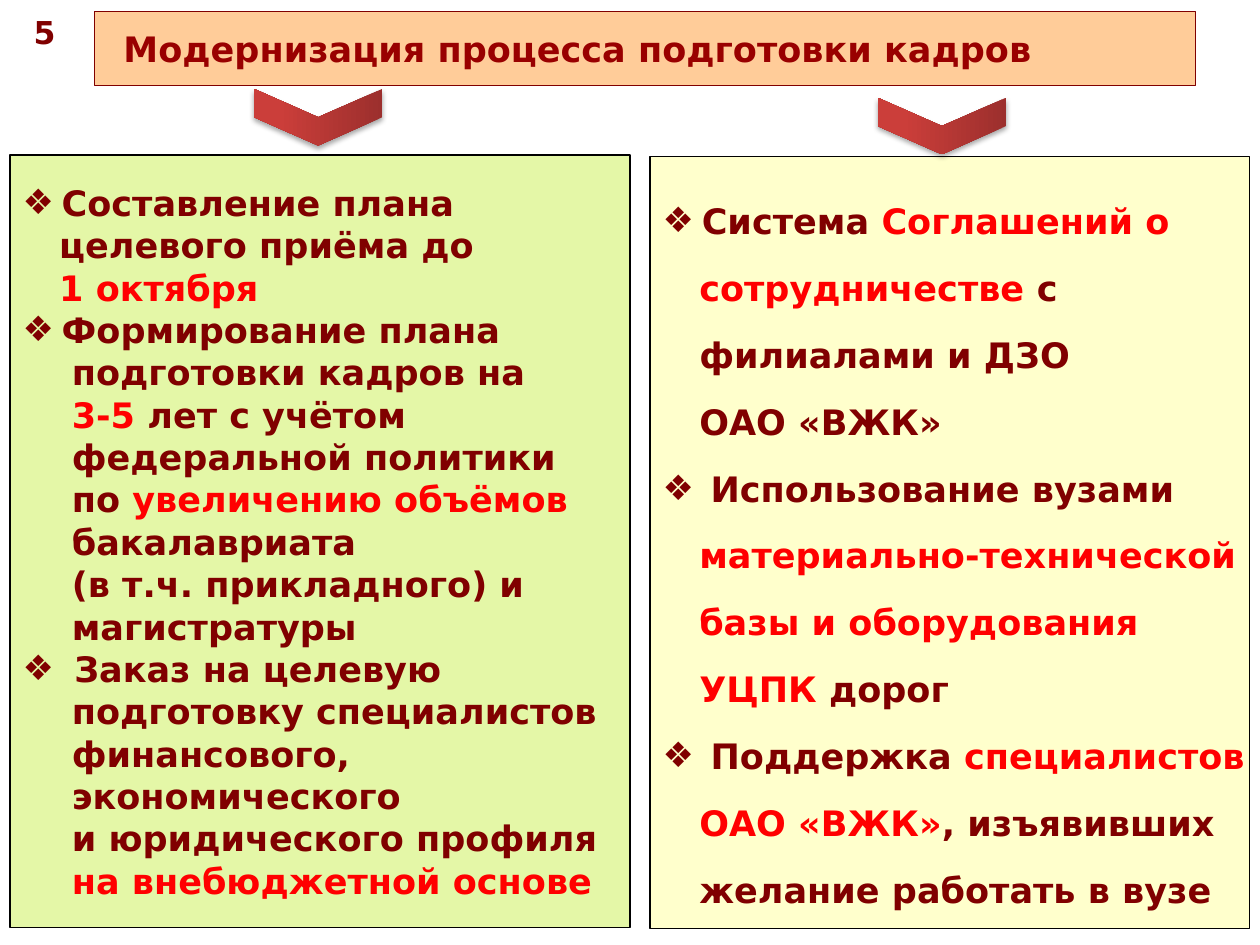
from dataclasses import dataclass

from lxml.etree import SubElement
from pptx import Presentation
from pptx.dml.color import RGBColor
from pptx.enum.shapes import MSO_SHAPE as Preset
from pptx.enum.text import MSO_ANCHOR as Anchor, MSO_AUTO_SIZE as AutoSize, PP_ALIGN as Align
from pptx.oxml.ns import qn
from pptx.util import Inches, Pt


@dataclass(frozen=True)
class Theme:
    font: str = "DejaVu Sans"
    number_size: int = 18
    text_size: int = 20
    text: str = "800000"
    accent: str = "FF0000"
    title: str = "990000"
    title_fill: str = "FFCC99"
    border: str = "000000"
    arrow_dark: str = "9C2F2D"
    arrow_light: str = "CB3E3A"
    border_width: float = 0.75


THEME = Theme()

# Content: text between bars is set in the accent colour
NUMBER = "5"
TITLE = "Модернизация процесса подготовки кадров"

# Each item: indent of its first line, indent of the other lines, lines
PANELS = [
    {
        "box": (0.08, 1.23, 4.92, 6.13), "fill": "E4F7A7", "spacing": 24.2,
        "items": [
            (0.31, 0.29, ["Составление плана", "целевого приёма до", "|1 октября|"]),
            (0.31, 0.39, [
                "Формирование плана", "подготовки кадров на", "|3-5| лет с учётом",
                "федеральной политики", "по |увеличению объёмов|", "бакалавриата",
                "(в т.ч. прикладного) и", "магистратуры"]),
            (0.41, 0.39, [
                "Заказ на целевую", "подготовку специалистов", "финансового,",
                "экономического", "и юридического профиля",
                "|на внебюджетной основе|"]),
        ],
    },
    {
        "box": (5.16, 1.24, 4.76, 6.13), "fill": "FFFFCC", "spacing": 38.2,
        "items": [
            (0.31, 0.29, [
                "Система |Соглашений о|", "|сотрудничестве| с",
                "филиалами и ДЗО", "ОАО «ВЖК»"]),
            (0.38, 0.29, [
                "Использование вузами", "|материально-технической|",
                "|базы и оборудования|", "|УЦПК| дорог"]),
            (0.38, 0.29, [
                "Поддержка |специалистов|", "|ОАО «ВЖК»|, изъявивших",
                "желание работать в вузе"]),
        ],
    },
]
ARROWS = [(2.3, 0.42), (7.25, 0.49)]
ARROW_SIZE = (0.45, 1.02)


def color(value):
    return RGBColor.from_string(value)


def place(shape, box):
    shape.left, shape.top, shape.width, shape.height = map(Inches, box)


def style_box(shape, fill, line):
    shape.fill.solid()
    shape.fill.fore_color.rgb = color(fill)
    shape.line.color.rgb = color(line)
    shape.line.width = Pt(THEME.border_width)


def set_frame(frame, left=0.1, right=0.1, wrap=True):
    frame.auto_size = AutoSize.NONE
    frame.word_wrap = wrap
    frame.vertical_anchor = Anchor.MIDDLE
    frame.margin_left, frame.margin_right = Inches(left), Inches(right)
    frame.margin_top = frame.margin_bottom = Inches(0.05)


def write(para, text, size=THEME.text_size, ink=THEME.text, align=Align.LEFT, spacing=None):
    para.alignment = align
    para.space_before = Pt(0)
    if spacing:
        para.line_spacing = Pt(spacing)
    for index, part in enumerate(text.split("|")):
        if not part:
            continue
        span = para.add_run()
        span.text = part
        span.font.name = THEME.font
        span.font.size = Pt(size)
        span.font.bold = True
        span.font.color.rgb = color(THEME.accent if index % 2 else ink)


def set_bullet(para, indent, hanging):
    props = para._p.get_or_add_pPr()
    props.set("marL", str(Inches(indent)))
    props.set("indent", str(-Inches(indent) if hanging else 0))
    if hanging:
        SubElement(props, qn("a:buFont"), typeface=THEME.font)
        SubElement(props, qn("a:buChar"), char="❖")
    else:
        SubElement(props, qn("a:buNone"))


def fill_panel(shape, panel):
    place(shape, panel["box"])
    style_box(shape, panel["fill"], THEME.border)
    frame = shape.text_frame
    set_frame(frame, right=0)
    lines = [
        (line, first if row == 0 else rest, row == 0)
        for first, rest, rows in panel["items"]
        for row, line in enumerate(rows)
    ]
    for index, (line, indent, starts_item) in enumerate(lines):
        para = frame.add_paragraph() if index else frame.paragraphs[0]
        write(para, line, spacing=panel["spacing"])
        set_bullet(para, indent, starts_item)


def add_arrow(page, position):
    arrow = page.shapes.add_shape(Preset.CHEVRON, *map(Inches, position + ARROW_SIZE))
    arrow.rotation = 90
    arrow.line.fill.background()
    arrow.fill.gradient()
    arrow.fill.gradient_angle = 270
    stops = arrow.fill.gradient_stops
    for stop, position, ink in zip(stops, (0, 0.8), (THEME.arrow_dark, THEME.arrow_light)):
        stop.position = position
        stop.color.rgb = color(ink)
    # Soft shadow straight below
    arrow.shadow.inherit = False
    effects = arrow._element.spPr.find(qn("a:effectLst"))
    shadow = SubElement(effects, qn("a:outerShdw"), blurRad=str(Pt(3.1)),
                        dist=str(Pt(1.8)), dir="5400000", rotWithShape="0")
    ink = SubElement(shadow, qn("a:srgbClr"), val=THEME.border)
    SubElement(ink, qn("a:alpha"), val="35000")


def main():
    deck = Presentation()
    deck.slide_width, deck.slide_height = Inches(10), Inches(7.5)
    page = deck.slides.add_slide(deck.slide_layouts[3])
    title, *bodies = page.placeholders

    # Slide number
    number = page.shapes.add_textbox(*map(Inches, (0.12, 0.06, 0.47, 0.38)))
    set_frame(number.text_frame, wrap=False)
    write(number.text_frame.paragraphs[0], NUMBER, size=THEME.number_size, align=Align.CENTER)

    # Title bar
    place(title, (0.75, 0.09, 8.74, 0.59))
    style_box(title, THEME.title_fill, THEME.text)
    set_frame(title.text_frame, left=0.23)
    write(title.text_frame.paragraphs[0], TITLE, ink=THEME.title)

    # Two panels and the arrows that lead to them
    for body, panel in zip(bodies, PANELS):
        fill_panel(body, panel)
    for position in ARROWS:
        add_arrow(page, position)

    deck.save("out.pptx")


if __name__ == "__main__":
    main()
